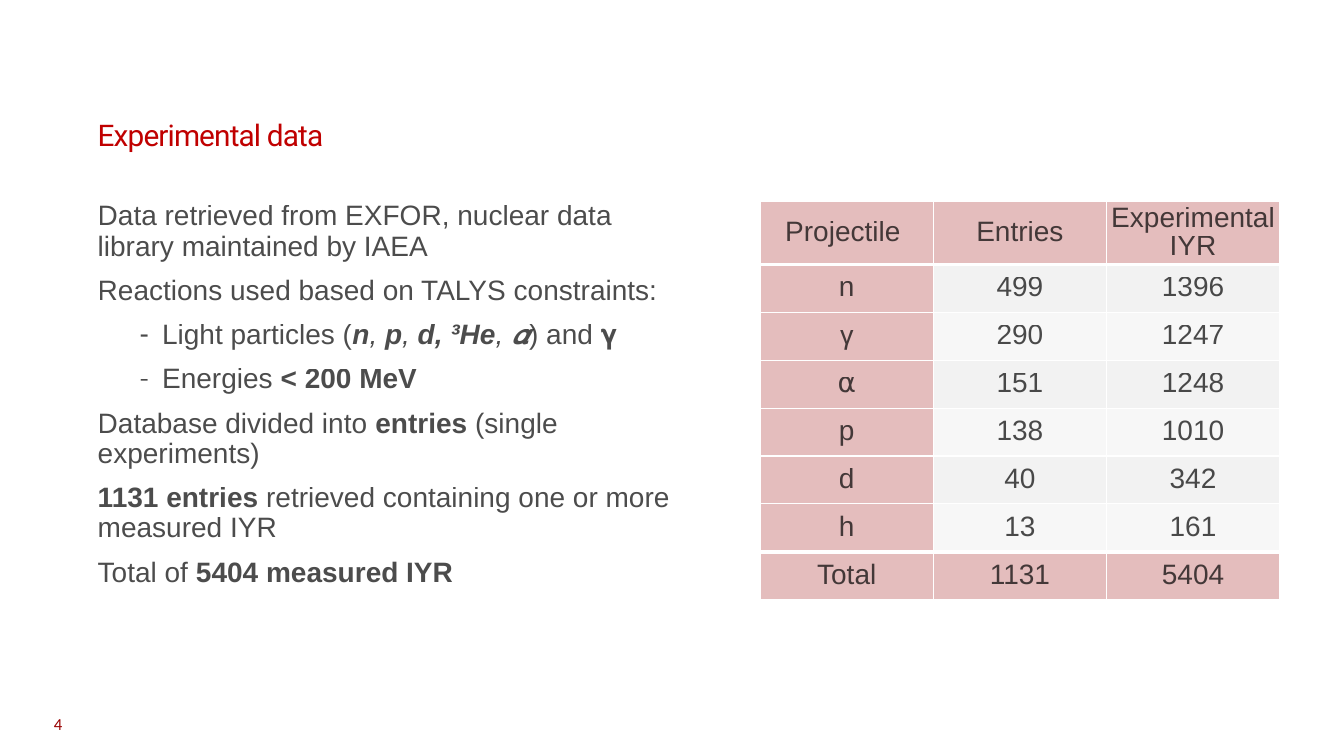
from lxml import etree
from pptx import Presentation
from pptx.dml.color import RGBColor
from pptx.enum.text import MSO_ANCHOR, MSO_AUTO_SIZE, PP_ALIGN
from pptx.oxml.ns import qn
from pptx.util import Pt

LEFT, CENTER, RIGHT = PP_ALIGN.LEFT, PP_ALIGN.CENTER, PP_ALIGN.RIGHT
TOP, MIDDLE, BOTTOM = MSO_ANCHOR.TOP, MSO_ANCHOR.MIDDLE, MSO_ANCHOR.BOTTOM
NO_AUTOFIT = MSO_AUTO_SIZE.NONE

BLACK = RGBColor(0x00, 0x00, 0x00)
WHITE = RGBColor(0xFF, 0xFF, 0xFF)
TITLE_RED = RGBColor(0xC0, 0x00, 0x00)
DARK_RED = RGBColor(0x99, 0x00, 0x00)
BANDS = RGBColor(0xF2, 0xF2, 0xF2), RGBColor(0xF7, 0xF7, 0xF7)

TEXT_OPACITY = 70
HEADING_OPACITY = 26

# Each paragraph: level, then spans of (text, style), where b is bold and i italic
STATEMENTS = [
    (0, [("Data retrieved from EXFOR, nuclear data library maintained by IAEA", "")]),
    (0, [("Reactions used based on TALYS constraints:", "")]),
    (1, [("Light particles (", ""), ("n", "bi"), (",", "i"), (" p", "bi"), (",", "i"),
         (" d, ³He", "bi"), (", 𝜶", "i"), (") and 𝛄", "")]),
    (1, [("Energies ", ""), ("< 200 MeV", "b")]),
    (0, [("Database divided into ", ""), ("entries ", "b"), ("(single experiments)", "")]),
    (0, [("1131 entries", "b"), (" retrieved containing one or more measured IYR", "")]),
    (0, [("Total of ", ""), ("5404 measured IYR", "b")]),
]
PROJECTILES = [
    ("Projectile ", "Entries", "Experimental IYR"),
    ("n", "499", "1396"),
    ("γ", "290", "1247"),
    ("⍺", "151", "1248"),
    ("p", "138", "1010"),
    ("d", "40", "342"),
    ("h", "13", "161"),
    ("Total", "1131", "5404"),
]


def set_opacity(element, percent):
    """Make the colour held by a fill or text element partly transparent."""
    colour = element.find(".//" + qn("a:srgbClr"))
    etree.SubElement(colour, qn("a:alpha"), val=str(percent * 1000))


def add_span(para, text, size=20, font="Arial", colour=BLACK, opacity=TEXT_OPACITY,
             style="", spacing=None):
    span = para.add_run()
    span.text = text
    span.font.size = Pt(size)
    span.font.name = font
    span.font.bold = "b" in style
    span.font.italic = "i" in style
    span.font.color.rgb = colour
    properties = span.font._element
    if opacity < 100:
        set_opacity(properties, opacity)
    if spacing is not None:
        properties.set("spc", str(round(spacing * 100)))


def set_bullet(para, mark=None):
    properties = para._p.get_or_add_pPr()
    if mark:
        properties.set("marL", str(Pt(46)))
        properties.set("indent", str(Pt(-16)))
        etree.SubElement(properties, qn("a:buChar"), char=mark)
    else:
        properties.set("marL", "0")
        properties.set("indent", "0")
        etree.SubElement(properties, qn("a:buNone"))


def place(box, left, top, width, height, anchor):
    """Move a text shape and set up its frame, which is returned."""
    box.left, box.top, box.width, box.height = Pt(left), Pt(top), Pt(width), Pt(height)
    frame = box.text_frame
    frame.margin_left = frame.margin_right = Pt(3.6)
    frame.margin_top = frame.margin_bottom = Pt(3.6)
    frame.vertical_anchor = anchor
    frame.word_wrap = True
    frame.auto_size = NO_AUTOFIT
    return frame


def fill_title(page, left, top, width, height):
    para = place(page.shapes.title, left, top, width, height, BOTTOM).paragraphs[0]
    para.alignment = LEFT
    para.line_spacing = 0.9
    add_span(para, "Experimental data", size=21.3, font="Roboto", colour=TITLE_RED,
             opacity=100, spacing=-0.6)


def fill_statements(page, left, top, width, height):
    frame = place(page.placeholders[1], left, top, width, height, TOP)
    for index, (level, spans) in enumerate(STATEMENTS):
        para = frame.add_paragraph() if index else frame.paragraphs[0]
        para.level = level
        para.alignment = LEFT
        para.line_spacing = 0.9
        para.space_before = Pt(10 if index else 0)
        set_bullet(para, "-" if level else None)
        for text, style in spans:
            add_span(para, text, style=style)


def set_borders(cell, top, bottom):
    properties = cell._tc.get_or_add_tcPr()
    for side, weight in (("L", 1), ("R", 1), ("T", top), ("B", bottom)):
        line = etree.SubElement(properties, qn("a:ln" + side), w=str(Pt(weight)))
        fill = etree.SubElement(line, qn("a:solidFill"))
        etree.SubElement(fill, qn("a:srgbClr"), val=str(WHITE))


def format_cell(cell, text, colour, opacity):
    cell.fill.solid()
    cell.fill.fore_color.rgb = colour
    if opacity < 100:
        set_opacity(cell._tc.tcPr.find(qn("a:solidFill")), opacity)
    cell.margin_left = cell.margin_right = cell.margin_top = cell.margin_bottom = 0
    cell.vertical_anchor = MIDDLE
    para = cell.text_frame.paragraphs[0]
    para.alignment = CENTER
    para.line_spacing = 0.9
    add_span(para, text)


def add_projectile_table(page, left, top, width, height, header_height=45):
    row_count, column_count = len(PROJECTILES), len(PROJECTILES[0])
    last = row_count - 1
    table = page.shapes.add_table(row_count, column_count, Pt(left), Pt(top),
                                  Pt(width), Pt(height)).table
    table.horz_banding = False
    for column in table.columns:
        column.width = Pt(width / column_count)
    for index, row in enumerate(table.rows):
        row.height = Pt(header_height if index == 0 else (height - header_height) / last)
        for position, cell in enumerate(row.cells):
            set_borders(cell, top=3 if index in (1, last) else 1,
                        bottom=3 if index in (0, last - 1) else 1)
            heading = index in (0, last) or position == 0
            format_cell(cell, PROJECTILES[index][position],
                        DARK_RED if heading else BANDS[(index - 1) % 2],
                        HEADING_OPACITY if heading else 100)


def add_page_number(page, left, top, width, height):
    box = page.shapes.add_textbox(0, 0, 0, 0)
    para = place(box, left, top, width, height, MIDDLE).paragraphs[0]
    para.alignment = RIGHT
    add_span(para, "4", size=12, font="Calibri", colour=DARK_RED, opacity=100)


def main():
    deck = Presentation()
    deck.slide_width, deck.slide_height = Pt(960), Pt(540)
    page = deck.slides.add_slide(deck.slide_layouts[1])
    fill_title(page, 66.2, 77.8, 316, 35.3)
    fill_statements(page, 66.2, 140.4, 427.7, 338.4)
    add_projectile_table(page, 543, 144, 371.1, 284.4)
    add_page_number(page, 18.7, 506.9, 29.5, 20.9)
    deck.save("out.pptx")


if __name__ == "__main__":
    main()
